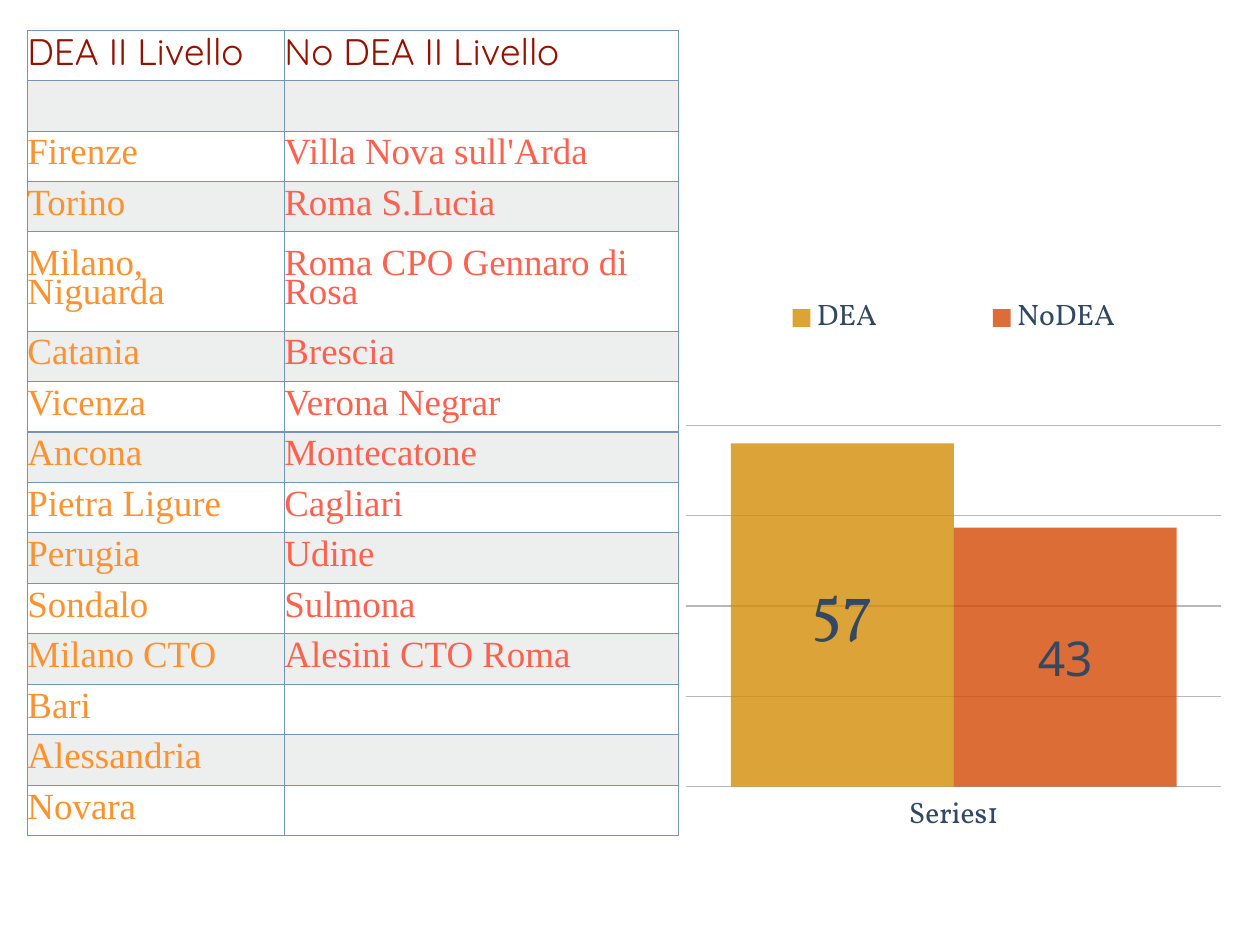
from lxml.etree import SubElement
from pptx import Presentation
from pptx.chart.data import CategoryChartData
from pptx.dml.color import RGBColor
from pptx.enum.chart import (XL_CHART_TYPE, XL_LABEL_POSITION, XL_LEGEND_POSITION,
                             XL_TICK_LABEL_POSITION, XL_TICK_MARK)
from pptx.enum.text import MSO_ANCHOR
from pptx.oxml import parse_xml
from pptx.oxml.ns import nsdecls, qn
from pptx.util import Inches, Pt

HEADINGS = ("DEA II Livello", "No DEA II Livello")
DEA_CENTRES = ["Firenze", "Torino", "Milano, Niguarda", "Catania", "Vicenza", "Ancona",
               "Pietra Ligure", "Perugia", "Sondalo", "Milano CTO", "Bari",
               "Alessandria", "Novara"]
OTHER_CENTRES = ["Villa Nova sull'Arda", "Roma S.Lucia", "Roma CPO Gennaro di Rosa",
                 "Brescia", "Verona Negrar", "Montecatone", "Cagliari", "Udine",
                 "Sulmona", "Alesini CTO Roma", "", "", ""]
TALL_ROW = 4


def color(value):
    return RGBColor.from_string(value)


def set_values(target, values):
    for name, value in values.items():
        setattr(target, name, value)


def set_alpha(element, percent):
    """Make the solid fill inside an element partly transparent."""
    fill_color = element.find(".//" + qn("a:srgbClr"))
    SubElement(fill_color, qn("a:alpha")).set("val", str(percent * 1000))


def manual_layout(x, y, width, height, inner=False):
    target = '<c:layoutTarget val="inner"/>' if inner else ""
    return parse_xml(
        f'<c:layout {nsdecls("c")}><c:manualLayout>{target}'
        '<c:xMode val="edge"/><c:yMode val="edge"/>'
        f'<c:x val="{x}"/><c:y val="{y}"/><c:w val="{width}"/><c:h val="{height}"/>'
        '</c:manualLayout></c:layout>')


def remove_layout(element):
    for layout in element.findall(qn("c:layout")):
        element.remove(layout)


class CentresSlide:
    heading = {"name": "Quicksand", "size": 30, "color": "941100"}
    columns = [{"name": "Times New Roman", "size": 30, "color": shade}
               for shade in ("FF912F", "FF614E")]
    axis_text = {"name": "Vollkorn", "size": 24, "color": "314864"}
    chart_text = {"name": "Noto Sans", "size": 10, "color": "324863"}
    border, band, grid = "7695B6", "C5C7C9", "B8B8B8"

    def __init__(self, presentation):
        self.slide = presentation.slides.add_slide(presentation.slide_layouts[6])

    def style_font(self, font, style):
        set_values(font, {"name": style["name"], "size": Pt(style["size"])})
        font.color.rgb = color(style["color"])

    def style_line(self, line):
        line.width = Pt(1)
        line.color.rgb = color(self.grid)

    def add_cell(self, cell, text, style, banded):
        set_values(cell, {"vertical_anchor": MSO_ANCHOR.MIDDLE, "margin_left": 0,
                          "margin_right": 0, "margin_top": 0, "margin_bottom": 0})
        paragraph = cell.text_frame.paragraphs[0]
        paragraph.line_spacing = 0.7
        if text:
            run = paragraph.add_run()
            run.text = text
            self.style_font(run.font, style)
        properties = cell._tc.get_or_add_tcPr()
        if banded:
            cell.fill.solid()
            cell.fill.fore_color.rgb = color(self.band)
            set_alpha(properties, 30)
        else:
            cell.fill.background()
        # Borders come before the fill
        for position, side in enumerate("LRTB"):
            properties.insert(position, parse_xml(
                f'<a:ln{side} {nsdecls("a")} w="{Pt(1)}"><a:solidFill>'
                f'<a:srgbClr val="{self.border}"/></a:solidFill></a:ln{side}>'))

    def add_table(self, rows, left, top, widths, row_height, tall_height):
        height = row_height * (len(rows) - 1) + tall_height
        table = self.slide.shapes.add_table(
            len(rows), len(widths), Inches(left), Inches(top),
            Inches(sum(widths)), Inches(height)).table
        set_values(table, {"first_row": False, "horz_banding": False})
        for column, width in zip(table.columns, widths):
            column.width = Inches(width)
        for index, texts in enumerate(rows):
            table.rows[index].height = Inches(
                tall_height if index == TALL_ROW else row_height)
            for column, text in enumerate(texts):
                style = self.columns[column] if index else self.heading
                self.add_cell(table.cell(index, column), text, style, index % 2 == 1)

    def add_chart(self, series_styles, left, top, width, height):
        data = CategoryChartData()
        data.categories = ["Series1"]
        for name, value, *_ in series_styles:
            data.add_series(name, [value])
        chart = self.slide.shapes.add_chart(
            XL_CHART_TYPE.COLUMN_CLUSTERED, Inches(left), Inches(top),
            Inches(width), Inches(height), data).chart
        set_values(chart, {"has_title": False, "has_legend": True})
        self.style_font(chart.font, self.chart_text)
        set_values(chart.plots[0], {"gap_width": 40, "overlap": 0,
                                    "vary_by_categories": False})
        plot_area = chart._chartSpace.chart.plotArea
        remove_layout(plot_area)
        plot_area.insert(0, manual_layout(0.088, 0.236, 0.824, 0.654, inner=True))
        self.style_axes(chart)
        self.style_legend(chart.legend)
        for series, values in zip(chart.plots[0].series, series_styles):
            self.style_series(series, *values[2:])

    def style_axes(self, chart):
        for axis in (chart.category_axis, chart.value_axis):
            set_values(axis, {"major_tick_mark": XL_TICK_MARK.NONE,
                              "minor_tick_mark": XL_TICK_MARK.NONE})
            self.style_font(axis.tick_labels.font, self.axis_text)
        chart.category_axis.tick_label_position = XL_TICK_LABEL_POSITION.LOW
        self.style_line(chart.category_axis.format.line)
        set_values(chart.value_axis, {
            "minimum_scale": 0, "maximum_scale": 60, "major_unit": 15,
            "has_major_gridlines": True,
            "tick_label_position": XL_TICK_LABEL_POSITION.NONE})
        chart.value_axis.format.line.fill.background()
        self.style_line(chart.value_axis.major_gridlines.format.line)

    def style_legend(self, legend):
        set_values(legend, {"position": XL_LEGEND_POSITION.TOP, "include_in_layout": True})
        self.style_font(legend.font, self.axis_text)
        remove_layout(legend._element)
        legend._element.find(qn("c:legendPos")).addnext(
            manual_layout(0.088, 0, 0.824, 0.084))

    def style_series(self, series, fill_color, label_format, label_font, label_size):
        series.format.fill.solid()
        series.format.fill.fore_color.rgb = color(fill_color)
        set_alpha(series._element.find(qn("c:spPr")), 80)
        labels = series.data_labels
        set_values(labels, {"show_value": True, "position": XL_LABEL_POSITION.CENTER,
                            "number_format": label_format,
                            "number_format_is_linked": False})
        self.style_font(labels.font, {**self.chart_text, "name": label_font,
                                      "size": label_size})


def main():
    presentation = Presentation()
    set_values(presentation, {"slide_width": Inches(14.22), "slide_height": Inches(10.67)})
    centres = CentresSlide(presentation)

    # Column chart of the two groups
    centres.add_chart([("DEA", 57, "D38C07", "#,##0", "Vollkorn", 52),
                       ("NoDEA", 43, "D44906", "0", "Noto Sans", 39)],
                      7.1, 3.33, 7.33, 6.24)

    # Table of centres
    rows = [HEADINGS, ("", ""), *zip(DEA_CENTRES, OTHER_CENTRES)]
    centres.add_table(rows, 0.31, 0.34, (2.9, 4.45), 0.57, 1.12)

    presentation.save("out.pptx")


if __name__ == "__main__":
    main()
